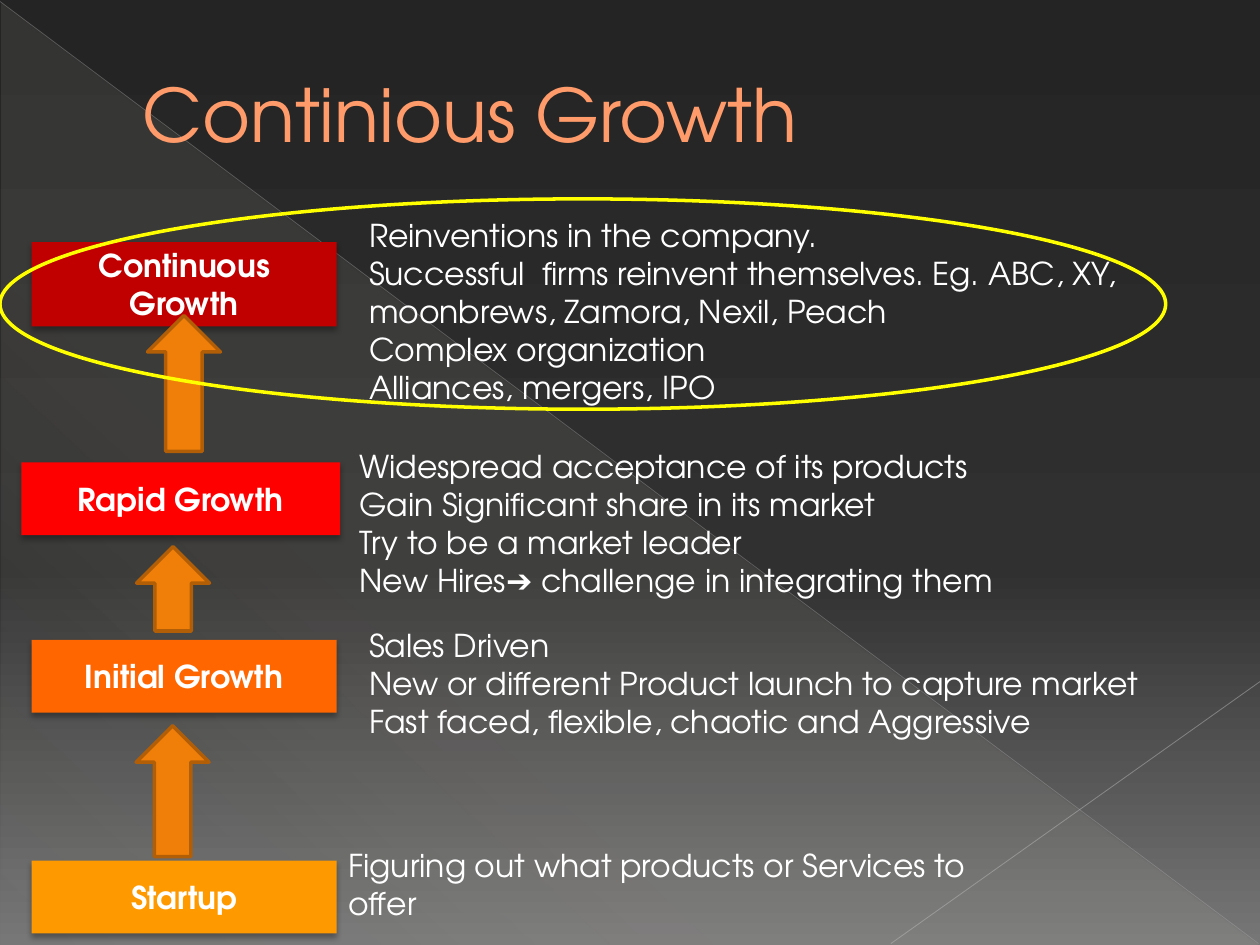
from lxml import etree
from pptx import Presentation
from pptx.dml.color import RGBColor
from pptx.enum.shapes import MSO_CONNECTOR, MSO_SHAPE
from pptx.enum.text import MSO_ANCHOR, MSO_AUTO_SIZE, PP_ALIGN
from pptx.oxml.ns import qn
from pptx.util import Cm, Pt

RECT, OVAL = MSO_SHAPE.RECTANGLE, MSO_SHAPE.OVAL
ARROW, TRIANGLE = MSO_SHAPE.RIGHT_ARROW, MSO_SHAPE.RIGHT_TRIANGLE
STRAIGHT = MSO_CONNECTOR.STRAIGHT
MIDDLE, CENTER, LEFT = MSO_ANCHOR.MIDDLE, PP_ALIGN.CENTER, PP_ALIGN.LEFT
FIT_SHAPE = MSO_AUTO_SIZE.SHAPE_TO_FIT_TEXT

FONT = "TeX Gyre Adventor"
WHITE = "FFFFFF"

# Label, fill, label box, note box, note lines (boxes: left, top, width, height in cm)
STAGES = [
    ("Continuous Growth", "C00000", (0.64, 4.88, 6.15, 1.7), (7.19, 4.24, 17.78, 4.11),
     ["Reinventions in the company.",
      "Successful  firms reinvent themselves. Eg. ABC, XY, "
      "moonbrews, Zamora, Nexil, Peach",
      "Complex organization",
      "Alliances, mergers, IPO"]),
    ("Rapid Growth", "FF0000", (0.43, 9.32, 6.43, 1.47), (6.99, 8.89, 17.78, 3.33),
     ["Widespread acceptance of its products",
      "Gain Significant share in its market",
      "Try to be a market leader",
      "New Hires➔ challenge in integrating them"]),
    ("Initial Growth", "FF6600", (0.64, 12.9, 6.15, 1.47), (7.19, 12.5, 17.78, 2.57),
     ["Sales Driven",
      "New or different Product launch to capture market",
      "Fast faced, flexible, chaotic and Aggressive"]),
    ("Startup", "FF9900", (0.64, 17.35, 6.15, 1.47), (6.77, 16.94, 13.16, 1.8),
     ["Figuring out what products or Services to offer"]),
]

# Centre x, centre y and length of each upward arrow, in cm
ARROWS = [(3.71, 7.73, 2.74), (3.49, 11.87, 1.7), (3.48, 15.95, 2.64)]
ARROW_THICKNESS = 1.47


def color(hex_value):
    return RGBColor.from_string(hex_value)


def add_color(parent, hex_value, alpha):
    """Append a colour with an opacity in percent."""
    clr = etree.SubElement(parent, qn("a:srgbClr"), val=hex_value)
    etree.SubElement(clr, qn("a:alpha"), val=str(alpha * 1000))


def set_gradient(fill, holder, stops, angle):
    """Give holder a linear gradient of (position, colour, opacity) stops."""
    fill.solid()
    solid = holder.find(qn("a:solidFill"))
    grad = etree.Element(qn("a:gradFill"), rotWithShape="1")
    stop_list = etree.SubElement(grad, qn("a:gsLst"))
    for pos, hex_value, alpha in stops:
        stop = etree.SubElement(stop_list, qn("a:gs"), pos=str(pos * 1000))
        add_color(stop, hex_value, alpha)
    etree.SubElement(grad, qn("a:lin"), ang=str(angle * 60000), scaled="0")
    holder.replace(solid, grad)


def add_shape(s, kind, box, fill=None, line=None):
    sp = s.shapes.add_shape(kind, *map(Cm, box))
    sp.shadow.inherit = False
    if fill:
        sp.fill.solid()
        sp.fill.fore_color.rgb = color(fill)
    else:
        sp.fill.background()
    if line:
        sp.line.color.rgb = color(line)
        sp.line.width = Pt(2)
    else:
        sp.line.fill.background()
    return sp


def add_line(s, points, hex_value, width, alpha):
    line = s.shapes.add_connector(STRAIGHT, *map(Cm, points))
    line.line.width = Pt(width)
    line.line.color.rgb = color(hex_value)
    spPr = line.element.spPr
    clr = spPr.find(".//" + qn("a:srgbClr"))
    etree.SubElement(clr, qn("a:alpha"), val=str(alpha * 1000))
    etree.SubElement(spPr, qn("a:effectLst"))


def write(tf, lines, size=18, hex_value=WHITE, bold=False, align=LEFT):
    tf.word_wrap = True
    tf.text = "\n".join(lines)
    for p in tf.paragraphs:
        p.alignment = align
        for r in p.runs:
            r.font.name = FONT
            r.font.size = Pt(size)
            r.font.bold = bold
            r.font.color.rgb = color(hex_value)


def add_text(s, box, lines, **style):
    sp = s.shapes.add_textbox(*map(Cm, box))
    write(sp.text_frame, lines, **style)
    return sp.text_frame


def add_label(s, box, text, fill):
    sp = add_shape(s, RECT, box, fill)
    effects = sp.element.spPr.find(qn("a:effectLst"))
    shadow = etree.SubElement(
        effects, qn("a:outerShdw"), blurRad=str(Pt(3.5)), dist=str(Pt(2.2)),
        dir=str(90 * 60000), rotWithShape="0")
    add_color(shadow, "000000", 32)
    sp.text_frame.vertical_anchor = MIDDLE
    write(sp.text_frame, [text], bold=True, align=CENTER)


def add_up_arrow(s, x, y, length):
    box = (x - length / 2, y - ARROW_THICKNESS / 2, length, ARROW_THICKNESS)
    sp = add_shape(s, ARROW, box, "F07F09", "B25E07")
    sp.rotation = 270


def add_backdrop(s):
    fill = s.background.fill
    fill.solid()
    set_gradient(fill, s.element.find(".//" + qn("p:bgPr")),
                 [(0, "242424", 100), (60, "303030", 100), (100, "767676", 100)], 90)
    sp = add_shape(s, TRIANGLE, (0.03, 0.05, 25.35, 19))
    set_gradient(sp.fill, sp.element.spPr,
                 [(0, "E3DED1", 10), (70, "E3DED1", 8), (100, "E3DED1", 1)], 133)
    add_line(s, (0, 0.03, 25.37, 19.02), "B6B6B6", 0.39, 35)
    add_line(s, (25.4, 13.74, 17.96, 19.02), "BFBFBF", 0.47, 45)


def main():
    prs = Presentation()
    prs.slide_width, prs.slide_height = Cm(25.4), Cm(19.05)
    s = prs.slides.add_slide(prs.slide_layouts[6])
    add_backdrop(s)

    # Title
    tf = add_text(s, (1.27, 0.74, 22.86, 3.07), ["Continious Growth"],
                  size=42, hex_value="FF9B6A")
    tf.vertical_anchor = MIDDLE
    tf.margin_left = Cm(1.6)

    # Growth stages with their notes
    for label, fill, label_box, note_box, lines in STAGES:
        add_label(s, label_box, label, fill)
        tf = add_text(s, note_box, lines)
        tf.auto_size = FIT_SHAPE

    # Arrows between the stages
    for arrow in ARROWS:
        add_up_arrow(s, *arrow)

    # Ring around the current stage
    add_shape(s, OVAL, (0, 4.01, 23.5, 4.24), line="FFFF00")

    prs.save("out.pptx")


if __name__ == "__main__":
    main()
